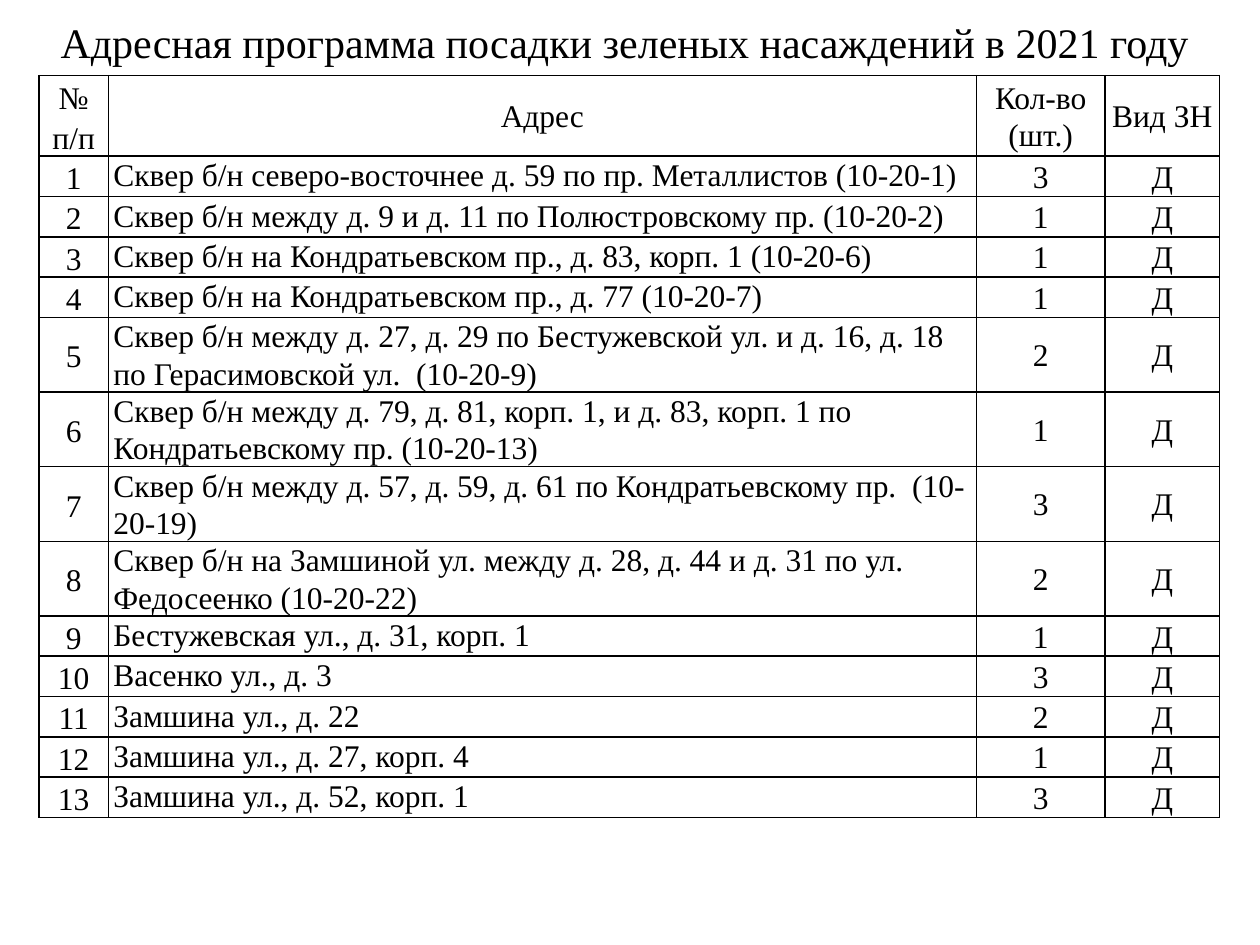
from pptx import Presentation
from pptx.dml.color import RGBColor
from pptx.enum.text import MSO_ANCHOR, MSO_AUTO_SIZE, PP_ALIGN
from pptx.oxml import parse_xml
from pptx.oxml.ns import nsdecls
from pptx.util import Inches, Pt

CENTER, LEFT = PP_ALIGN.CENTER, PP_ALIGN.LEFT
TOP, MIDDLE = MSO_ANCHOR.TOP, MSO_ANCHOR.MIDDLE
FONT = "Times New Roman"
COLORS = {"text": "000000", "line": "000000"}

# Content
TITLE = "Адресная программа посадки зеленых насаждений в 2021 году "
HEAD = ("№ п/п", "Адрес", "Кол-во (шт.)", "Вид ЗН")
KIND = "Д"
# Address, count, lines of text
SITES = [
    ("Сквер б/н северо-восточнее д. 59 по пр. Металлистов (10-20-1)", 3, 1),
    ("Сквер б/н между д. 9 и д. 11 по Полюстровскому пр. (10-20-2)", 1, 1),
    ("Сквер б/н на Кондратьевском пр., д. 83, корп. 1 (10-20-6)", 1, 1),
    ("Сквер б/н на Кондратьевском пр., д. 77 (10-20-7)", 1, 1),
    ("Сквер б/н между д. 27, д. 29 по Бестужевской ул. и д. 16, д. 18 "
     "по Герасимовской ул.  (10-20-9)", 2, 2),
    ("Сквер б/н между д. 79, д. 81, корп. 1, и д. 83, корп. 1 по "
     "Кондратьевскому пр. (10-20-13)", 1, 2),
    ("Сквер б/н между д. 57, д. 59, д. 61 по Кондратьевскому пр.  "
     "(10-20-19)", 3, 2),
    ("Сквер б/н на Замшиной ул. между д. 28, д. 44 и д. 31 по ул. "
     "Федосеенко (10-20-22)", 2, 2),
    ("Бестужевская ул., д. 31, корп. 1", 1, 1),
    ("Васенко ул., д. 3", 3, 1),
    ("Замшина ул., д. 22", 2, 1),
    ("Замшина ул., д. 27, корп. 4", 1, 1),
    ("Замшина ул., д. 52, корп. 1", 3, 1),
]
WIDTHS = (0.55, 6.89, 1.02, 0.91)
HEAD_H = 0.64
ROW_H = {1: 0.32, 2: 0.59}


def style(para, size, align, space=None):
    para.alignment = align
    para.line_spacing = space
    para.font.name = FONT
    para.font.size = Pt(size)
    para.font.bold = False
    para.font.color.rgb = RGBColor.from_string(COLORS["text"])


def add_borders(cell):
    props = cell._tc.get_or_add_tcPr()
    for i, side in enumerate("LRTB"):
        props.insert(i, parse_xml(
            f'<a:ln{side} {nsdecls("a")} w="{Pt(1)}"><a:solidFill>'
            f'<a:srgbClr val="{COLORS["line"]}"/></a:solidFill></a:ln{side}>'))


def fill_cell(cell, text, align, anchor, space):
    cell.text = text
    cell.vertical_anchor = anchor
    cell.margin_left = cell.margin_right = Inches(0.04)
    cell.margin_top = cell.margin_bottom = 0
    cell.fill.background()
    add_borders(cell)
    style(cell.text_frame.paragraphs[0], 18, align, space)


def main():
    prs = Presentation()
    prs.slide_width, prs.slide_height = Inches(10), Inches(7.5)
    slide = prs.slides.add_slide(prs.slide_layouts[5])

    # Title
    title = slide.shapes.title
    title.left, title.top = Inches(0.12), Inches(0.08)
    title.width, title.height = Inches(9.76), Inches(0.87)
    frame = title.text_frame
    frame.text = TITLE
    frame.word_wrap = True
    frame.auto_size = MSO_AUTO_SIZE.NONE
    frame.vertical_anchor = TOP
    style(frame.paragraphs[0], 24, CENTER)

    # Table
    rows = [HEAD] + [(str(n), place, str(count), KIND)
                     for n, (place, count, _) in enumerate(SITES, 1)]
    heights = [HEAD_H] + [ROW_H[lines] for _, _, lines in SITES]
    table = slide.shapes.add_table(
        len(rows), len(HEAD), Inches(0.31), Inches(0.6),
        Inches(sum(WIDTHS)), Inches(sum(heights))).table
    table.first_row = table.horz_banding = False
    for col, width in zip(table.columns, WIDTHS):
        col.width = Inches(width)
    for r, (row, height) in enumerate(zip(rows, heights)):
        table.rows[r].height = Inches(height)
        for c, text in enumerate(row):
            address = r > 0 and c == 1
            fill_cell(table.cell(r, c), text,
                      LEFT if address else CENTER,
                      TOP if address else MIDDLE,
                      1.15 if c == 0 else 1.07)

    prs.save("out.pptx")


if __name__ == "__main__":
    main()
